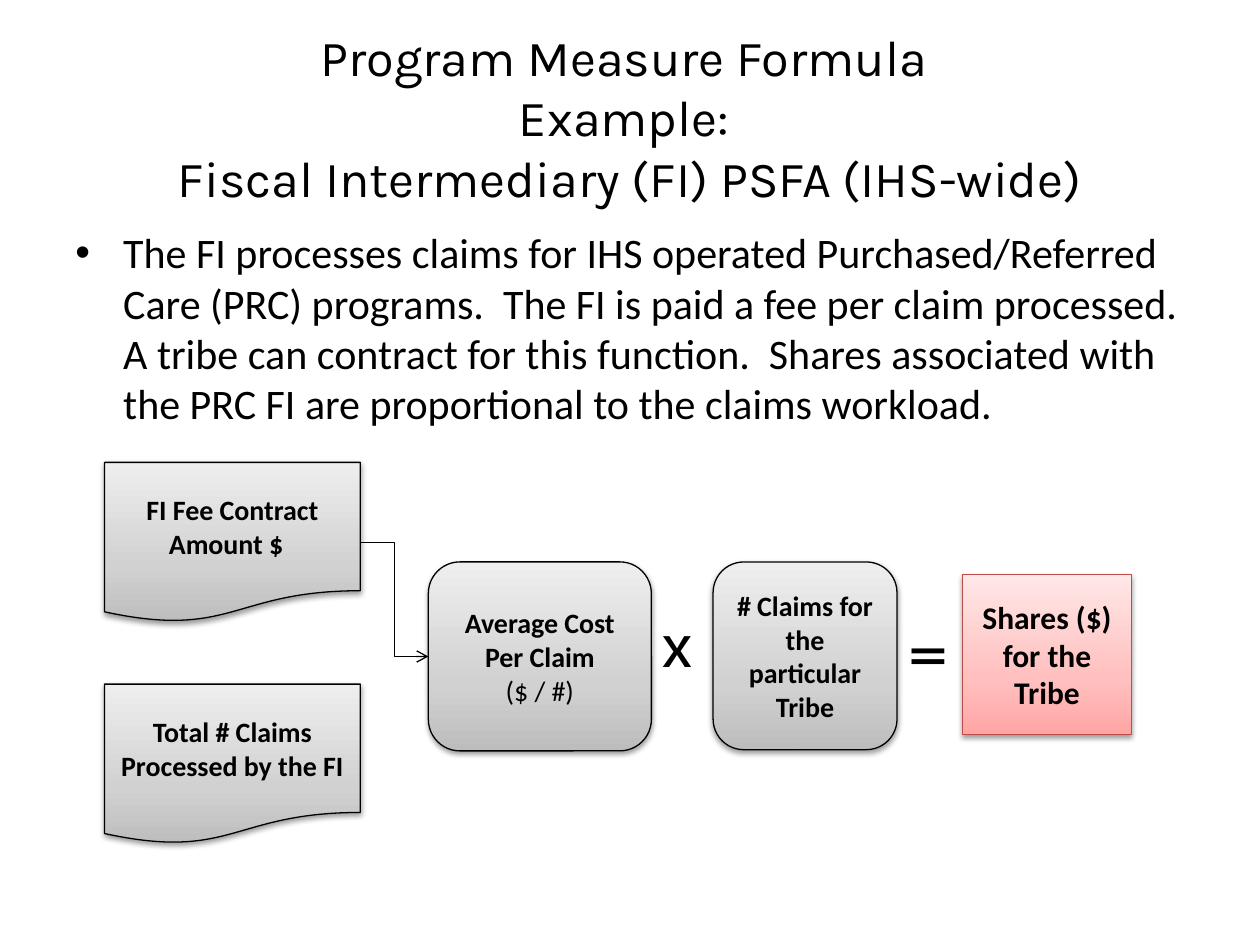
"""Build the Program Measure Formula slide with its flow of claim costs."""
from copy import deepcopy

from lxml.etree import SubElement
from pptx import Presentation
from pptx.dml.color import RGBColor
from pptx.enum.shapes import MSO_CONNECTOR, MSO_SHAPE
from pptx.enum.text import MSO_ANCHOR, MSO_AUTO_SIZE, PP_ALIGN
from pptx.oxml.ns import qn
from pptx.util import Inches, Pt

COLORS = {"text": "000000", "shares": "BF4C48"}
GRADIENTS = {
    "text": ["BDBDBD", "D1D1D1", "EEEEEE"],
    "shares": ["FFA6A5", "FFC0BF", "FFE7E7"],
}


def style_text(para, size, font="Calibri", bold=False, align=PP_ALIGN.CENTER):
    para.alignment = align
    for span in para.runs:
        for name, value in {"size": Pt(size), "name": font, "bold": bold}.items():
            setattr(span.font, name, value)
        span.font.color.rgb = RGBColor.from_string(COLORS["text"])


def add_node(page, kind, place, lines, size=16, theme="text"):
    node = page.shapes.add_shape(kind, *map(Inches, place))
    node.fill.gradient()
    node.fill.gradient_angle = 90
    stop_list = node._element.spPr.find(".//" + qn("a:gsLst"))
    stop_list.append(deepcopy(stop_list[0]))
    for stop, position, color in zip(node.fill.gradient_stops, (0, 0.35, 1), GRADIENTS[theme]):
        stop.position = position
        stop.color.rgb = RGBColor.from_string(color)
    node.line.color.rgb = RGBColor.from_string(COLORS[theme])
    node.line.width = Pt(0.75)
    node.shadow.inherit = False
    effects = node._element.spPr.find(qn("a:effectLst"))
    shadow = SubElement(effects, qn("a:outerShdw"), blurRad="40000", dist="20000",
                        dir="5400000", rotWithShape="0")
    shadow_color = SubElement(shadow, qn("a:srgbClr"), val=COLORS["text"])
    SubElement(shadow_color, qn("a:alpha"), val="38000")
    frame = node.text_frame
    frame.word_wrap = True
    frame.vertical_anchor = MSO_ANCHOR.MIDDLE
    frame.text = "\n".join(lines)
    for index, para in enumerate(frame.paragraphs):
        style_text(para, size, bold=index == 0)
    return node


deck = Presentation()
deck.slide_width, deck.slide_height = Inches(10), Inches(7.5)
page = deck.slides.add_slide(deck.slide_layouts[5])

title = page.shapes.title
title_place = {"left": 0.5, "top": 0.3, "width": 9, "height": 1.25}
for name, value in title_place.items():
    setattr(title, name, Inches(value))
title.text_frame.text = "Program Measure Formula \vExample: \vFiscal Intermediary (FI) PSFA (IHS-wide)"
title.text_frame.auto_size = MSO_AUTO_SIZE.NONE
title.text_frame.vertical_anchor = MSO_ANCHOR.MIDDLE
style_text(title.text_frame.paragraphs[0], 28.8, "Karla")

body = page.shapes.add_textbox(Inches(0.5), Inches(1.75), Inches(9), Inches(4.95))
body.text_frame.word_wrap = True
para = body.text_frame.paragraphs[0]
para.text = (
    "The FI processes claims for IHS operated Purchased/Referred Care (PRC) programs.  "
    "The FI is paid a fee per claim processed. A tribe can contract for this function.  "
    "Shares associated with the PRC FI are proportional to the claims workload."
)
style_text(para, 24, align=PP_ALIGN.LEFT)
para.space_before = Pt(4.8)
settings = para._p.get_or_add_pPr()
settings.set("marL", str(Inches(0.38)))
settings.set("indent", str(-Inches(0.38)))
SubElement(settings, qn("a:buFont"), typeface="Arial")
SubElement(settings, qn("a:buChar"), char="•")

average = add_node(page, MSO_SHAPE.ROUNDED_RECTANGLE, (3.4, 4.46, 1.77, 1.5),
                   ["Average Cost Per Claim", "($ / #)"])
add_node(page, MSO_SHAPE.RECTANGLE, (7.64, 4.56, 1.34, 1.27),
         ["Shares ($) for the Tribe"], 18, "shares")
fee, total = [
    add_node(page, MSO_SHAPE.FLOWCHART_DOCUMENT, (0.83, top, 2.03, 1.27), [label])
    for top, label in [(3.67, "FI Fee Contract Amount $  "),
                       (5.43, "Total # Claims Processed by the FI")]
]
add_node(page, MSO_SHAPE.ROUNDED_RECTANGLE, (5.66, 4.46, 1.46, 1.49),
         ["# Claims for the particular Tribe"])

for left, top, symbol, font in [(5.16, 4.75, "x", "Cabin"), (7.12, 4.79, "=", "TeX Gyre Bonum")]:
    box = page.shapes.add_textbox(Inches(left), Inches(top), Inches(0.62), Inches(0.71))
    box.text_frame.word_wrap = True
    box.text_frame.text = symbol
    style_text(box.text_frame.paragraphs[0], 36, font, align=PP_ALIGN.LEFT)

arrow = page.shapes.add_connector(MSO_CONNECTOR.ELBOW, Inches(2.86), Inches(4.31),
                                  Inches(3.4), Inches(5.21))
arrow.begin_connect(fee, 3)
arrow.end_connect(average, 1)
arrow.line.color.rgb = RGBColor.from_string(COLORS["text"])
arrow.line.width = Pt(0.75)
SubElement(arrow.line._get_or_add_ln(), qn("a:tailEnd"), type="arrow")
SubElement(arrow._element.spPr, qn("a:effectLst"))

deck.save("out.pptx")
